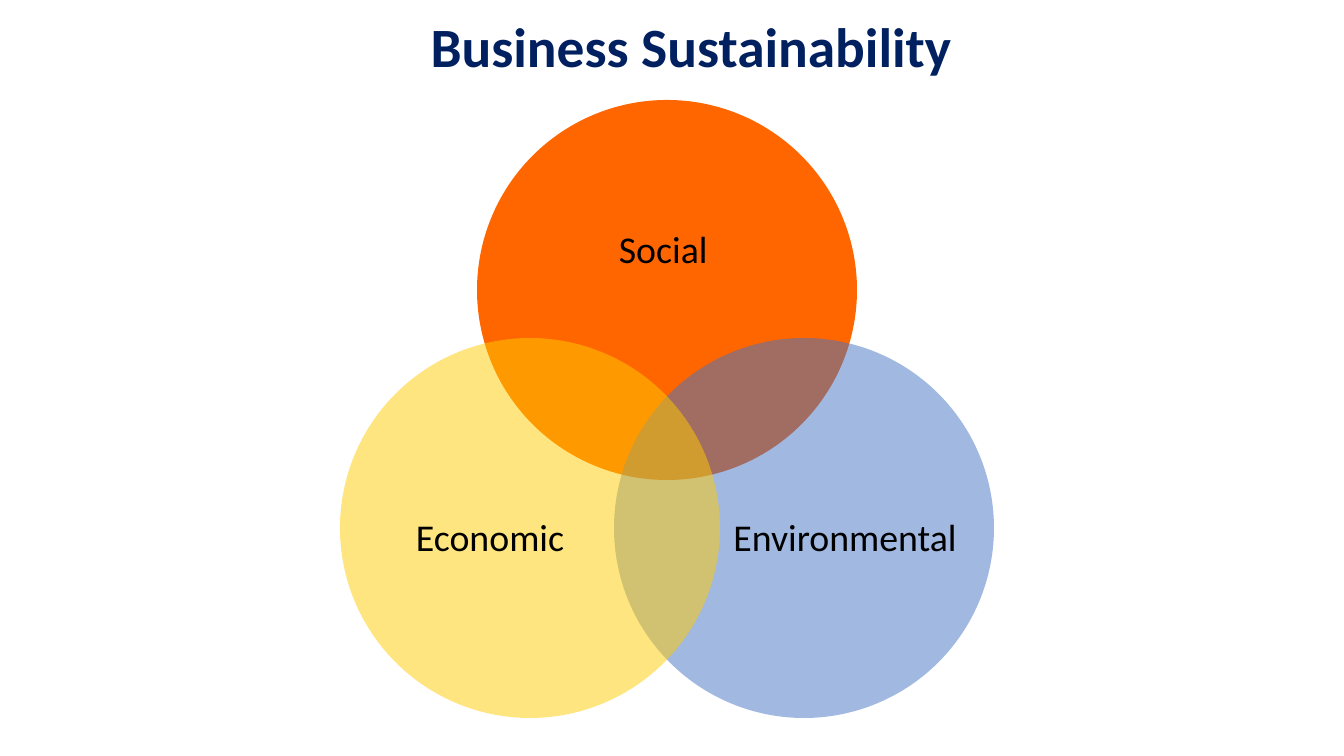
from lxml import etree
from pptx import Presentation
from pptx.dml.color import RGBColor
from pptx.enum.shapes import MSO_SHAPE
from pptx.enum.text import MSO_ANCHOR, MSO_AUTO_SIZE, PP_ALIGN
from pptx.oxml.ns import qn
from pptx.util import Pt

OVAL = MSO_SHAPE.OVAL
TOP, MIDDLE = MSO_ANCHOR.TOP, MSO_ANCHOR.MIDDLE
CENTER = PP_ALIGN.CENTER
NO_FIT = MSO_AUTO_SIZE.NONE
TITLE_ONLY = 5
DIAMETER = 380
COLOURS = {
    "title": "002060",
    "label": "000000",
    "social": "FF6600",
    "environmental": "4472C4",
    "economic": "FFCC00",
}


def px(length):
    return round(length * 914400 / 100.8)


def write(shape, text, size, colour, anchor, bold=False):
    frame = shape.text_frame
    frame.word_wrap = True
    frame.auto_size = NO_FIT
    frame.vertical_anchor = anchor
    frame.text = text
    para = frame.paragraphs[0]
    para.alignment = CENTER
    para.line_spacing = 0.9
    font = para.runs[0].font
    font.name = "Calibri"
    font.size = Pt(size)
    font.bold = bold
    font.color.rgb = RGBColor.from_string(COLOURS[colour])
    return frame


deck = Presentation()
deck.slide_width, deck.slide_height = px(1344), px(756)
page = deck.slides.add_slide(deck.slide_layouts[TITLE_ONLY])

title = page.shapes.title
title.left, title.top, title.width, title.height = map(px, (270, 17, 855, 126))
title_frame = write(title, "Business Sustainability ", 39.6, "title", TOP, bold=True)
title_frame.margin_top = px(3)

circles = [
    ("Social ", "social", 100, (477, 100), (528, 166, 279, 171)),
    ("Environmental ", "environmental", 50, (614, 338), (731, 435, 228, 209)),
    ("Economic", "economic", 50, (340, 338), (376, 435, 228, 209)),
]

for name, colour, opacity, corner, label_area in circles:
    circle = page.shapes.add_shape(OVAL, *map(px, (*corner, DIAMETER, DIAMETER)))
    circle.shadow.inherit = False
    circle.line.fill.background()
    circle.fill.solid()
    circle.fill.fore_color.rgb = RGBColor.from_string(COLOURS[colour])
    if opacity < 100:
        fill_colour = circle.element.spPr.find(qn("a:solidFill"))[0]
        etree.SubElement(fill_colour, qn("a:alpha")).set("val", str(opacity * 1000))

    label = page.shapes.add_textbox(*map(px, label_area))
    label_frame = write(label, name, 27, "label", MIDDLE)
    label_frame.margin_left = label_frame.margin_right = 0
    label_frame.margin_top = label_frame.margin_bottom = 0

deck.save("out.pptx")
